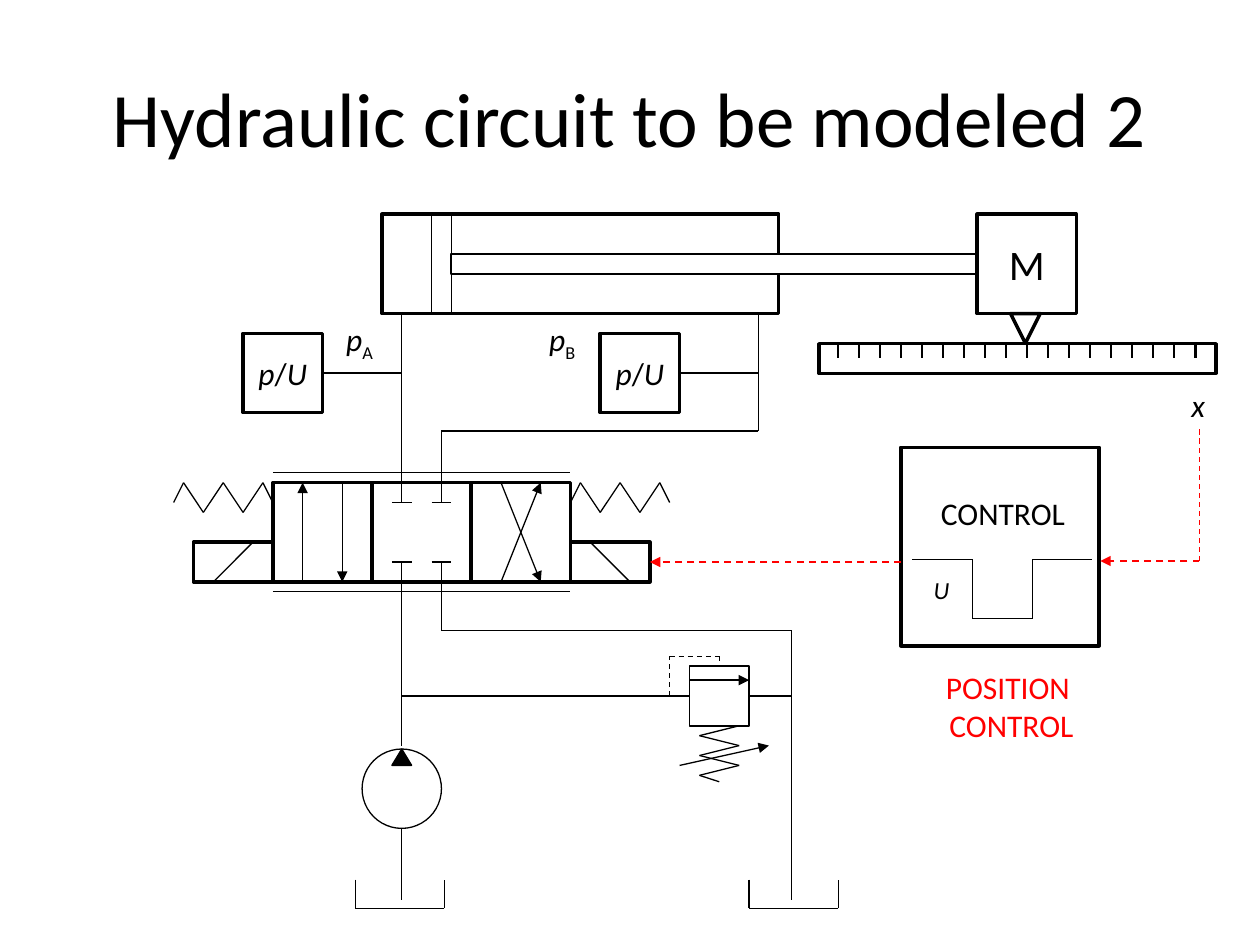
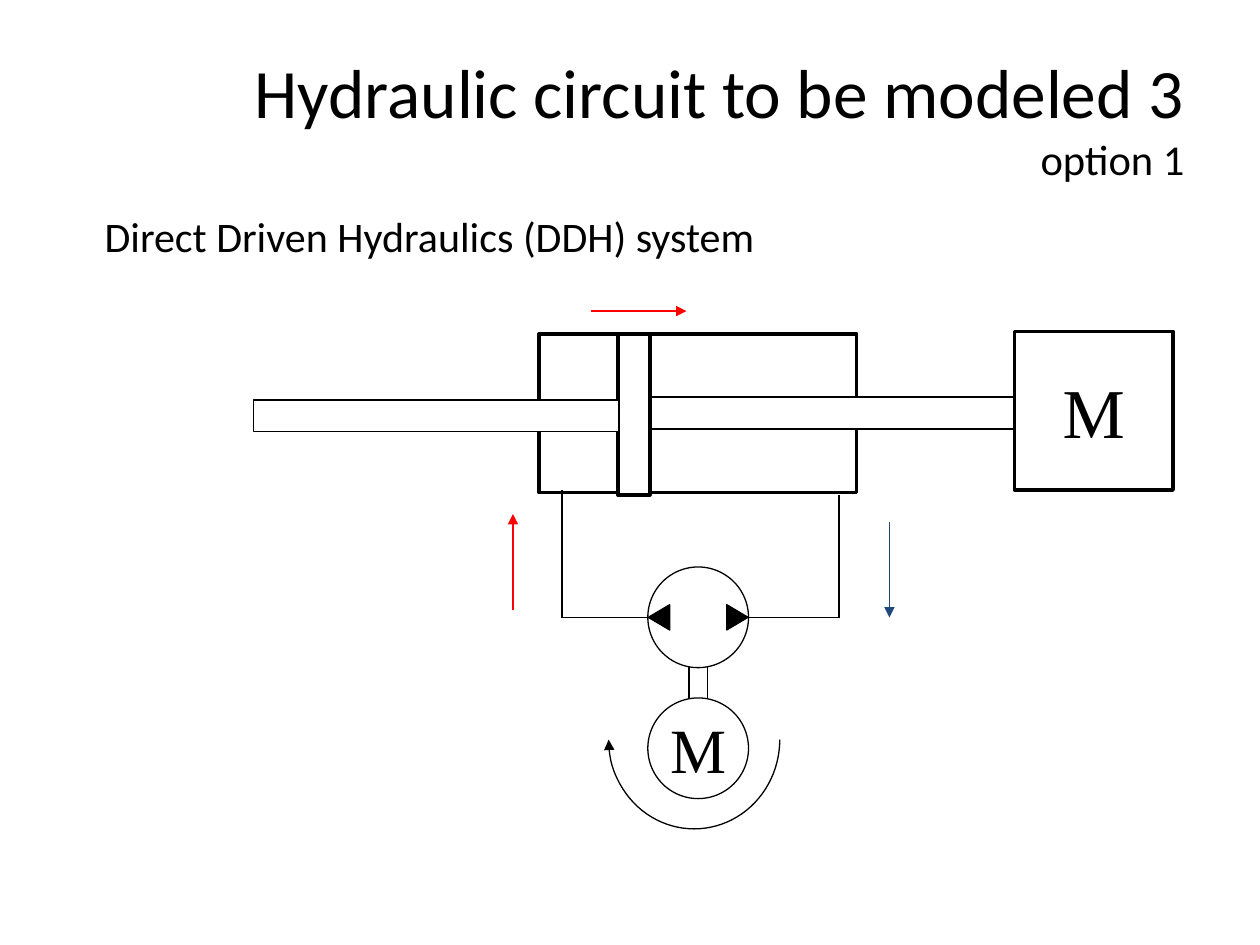
from dataclasses import dataclass
from itertools import pairwise
from typing import Any

from lxml.etree import SubElement
from pptx import Presentation
from pptx.dml.color import RGBColor
from pptx.enum.dml import MSO_LINE
from pptx.enum.shapes import MSO_CONNECTOR, MSO_SHAPE
from pptx.enum.text import MSO_ANCHOR, MSO_AUTO_SIZE, PP_ALIGN
from pptx.oxml.ns import qn
from pptx.util import Cm, Pt

LEFT, RIGHT = 1, 3  # connection sites of a rectangle


@dataclass(frozen=True)
class Theme:
    ink: str = "000000"
    paper: str = "FFFFFF"
    signal: str = "FF0000"
    backflow: str = "1F497D"
    sans: str = "Calibri"
    serif: str = "Times New Roman"
    title: float = 44
    title_small: float = 39.6
    option: float = 24.3
    mass: float = 24
    mass_large: float = 40
    motor: float = 36
    label: float = 18
    small: float = 14
    thin: float = 0.75
    medium: float = 1
    tick: float = 1.25
    heavy: float = 2


THEME = Theme()


def format_run(run, size, color=THEME.ink, font=THEME.sans, style=""):
    run.font.size = Pt(size)
    run.font.name = font
    run.font.color.rgb = RGBColor.from_string(color)
    if style == "italic":
        run.font.italic = True
    elif style == "subscript":
        run.font._element.set("baseline", "-25000")


def write(frame, content, size, color=THEME.ink, font=THEME.sans, align=PP_ALIGN.LEFT):
    """Fill a frame with plain text or with (text, style) pieces."""
    frame.word_wrap = False
    if isinstance(content, str):
        frame.text = content
    else:
        for piece, style in content:
            run = frame.paragraphs[0].add_run()
            run.text = piece
            format_run(run, size, color, font, style)
    for paragraph in frame.paragraphs:
        paragraph.alignment = align
        if isinstance(content, str):
            for run in paragraph.runs:
                format_run(run, size, color, font)


def add_arrowhead(shape):
    SubElement(shape._element.spPr.find(qn("a:ln")), qn("a:tailEnd"), type="triangle")


@dataclass
class Region:
    """A part of a slide whose lengths, in centimetres, count from its corner."""
    shapes: Any
    left: float = 0
    top: float = 0

    def at(self, x, y):
        return Region(self.shapes, self.left + x, self.top + y)

    def place(self, x, y):
        return Cm(self.left + x), Cm(self.top + y)

    def shape(self, x, y, width, height, weight=THEME.heavy,
              kind=MSO_SHAPE.RECTANGLE, fill=None, turn=0):
        shape = self.shapes.add_shape(kind, *self.place(x, y), Cm(width), Cm(height))
        shape.shadow.inherit = False
        shape.rotation = turn
        if fill:
            shape.fill.solid()
            shape.fill.fore_color.rgb = RGBColor.from_string(fill)
        else:
            shape.fill.background()
        shape.line.color.rgb = RGBColor.from_string(THEME.ink)
        shape.line.width = Pt(weight)
        return shape

    def line(self, start, end, weight=THEME.thin, color=THEME.ink, dashed=False, arrow=False):
        line = self.shapes.add_connector(
            MSO_CONNECTOR.STRAIGHT, *self.place(*start), *self.place(*end))
        line.line.color.rgb = RGBColor.from_string(color)
        line.line.width = Pt(weight)
        if dashed:
            line.line.dash_style = MSO_LINE.DASH
        if arrow:
            add_arrowhead(line)
        SubElement(line._element.spPr, qn("a:effectLst"))
        return line

    def route(self, *points, **style):
        for start, end in pairwise(points):
            self.line(start, end, **style)

    def label(self, x, y, width, height, content, size=THEME.label, **style):
        box = self.shapes.add_textbox(*self.place(x, y), Cm(width), Cm(height))
        write(box.text_frame, content, size, **style)


def write_inside(shape, content, size, **style):
    frame = shape.text_frame
    frame.margin_left = frame.margin_right = frame.margin_top = frame.margin_bottom = 0
    frame.vertical_anchor = MSO_ANCHOR.MIDDLE
    write(frame, content, size, align=PP_ALIGN.CENTER, **style)


def titled_slide(deck, heading, sizes, align):
    """Add a slide whose title runs take the given sizes in turn."""
    slide = deck.slides.add_slide(deck.slide_layouts.get_by_name("Title Only"))
    title = slide.shapes.title
    title.left, title.top, title.width, title.height = Cm(1.27), Cm(0.76), Cm(22.86), Cm(3.18)
    frame = title.text_frame
    frame.text = heading
    frame.auto_size = MSO_AUTO_SIZE.NONE
    frame.vertical_anchor = MSO_ANCHOR.MIDDLE
    paragraph = frame.paragraphs[0]
    paragraph.alignment = align
    for run, size in zip(paragraph.runs, sizes):
        format_run(run, size)
    return Region(slide.shapes)


def draw_cylinder_and_scale(region):
    region.shape(0, 0, 8, 2)
    for piston_face in (1, 1.4):
        region.line((piston_face, 0), (piston_face, 2))
    region.shape(1.4, 0.8, 10.6, 0.4, THEME.medium, fill=THEME.paper)
    mass = region.shape(12, 0, 2, 2)
    write_inside(mass, "M", THEME.mass)
    region.shape(12.67, 2, 0.6, 0.6, kind=MSO_SHAPE.ISOSCELES_TRIANGLE, turn=180)
    scale = region.at(8.81, 2.61)
    scale.shape(0, 0, 8, 0.6)
    for tick in range(18):
        x = 0.38 + tick * 0.424
        scale.line((x, 0.28), (x, 0), weight=THEME.tick)


def draw_pressure_sensor(region, hose_x, port, port_x):
    sensor = region.shape(0, 0, 1.6, 1.6)
    write_inside(sensor, [("p", "italic"), ("/", ""), ("U", "italic")], THEME.label)
    region.line((1.6, 0.8), (hose_x, 0.8)).begin_connect(sensor, RIGHT)
    region.label(port_x, -0.4, 1.09, 1.02, [("p", "italic"), (port, "subscript")])


def draw_directional_valve(region):
    """Draw the three positions, springs and solenoids; return the right solenoid."""
    for position in range(3):
        region.shape(2 * position, 0, 2, 2)
    for rail in (-0.2, 2.2):
        region.line((0, rail), (6, rail))
    for start, end in (((0.6, 2), (0.6, 0)), ((1.4, 0), (1.4, 2)),
                       ((4.6, 0), (5.4, 2)), ((4.6, 2), (5.4, 0))):
        region.line(start, end, arrow=True)
    for port in (2.6, 3.4):
        for edge, stop in ((0, 0.4), (2, 1.6)):
            region.line((port, edge), (port, stop))
            region.line((port - 0.2, stop), (port + 0.2, stop))
    coil = ((0, 0.4), (0.2, 0), (0.6, 0.6), (1, 0), (1.4, 0.6), (1.8, 0), (2, 0.4))
    for side, outward in ((0, -1), (6, 1)):
        region.route(*((side + outward * x, y) for x, y in coil))
        solenoid = region.shape(min(side, side + 1.6 * outward), 1.2, 1.6, 0.8)
        region.line((side + 0.4 * outward, 1.2), (side + 1.2 * outward, 2))
    return solenoid


def draw_relief_valve(region):
    body = region.shape(0, 0, 1.2, 1.2, THEME.medium)
    region.line((0, 0.28), (1.2, 0.28), arrow=True)
    region.route((-0.4, 0.6), (-0.4, -0.2), (0.6, -0.2), (0.6, 0), dashed=True)
    turns = [(0.2 if i % 2 else 1, 1.2 + 0.2 * i) for i in range(6)]
    region.route(*turns, (0.6, 2.33))
    region.line((-0.2, 2), (1.6, 1.6), arrow=True)
    return body


def draw_pump(region):
    region.shape(0, 0, 1.6, 1.6, THEME.thin, MSO_SHAPE.OVAL, THEME.paper)
    region.shape(0.6, 0, 0.4, 0.33, THEME.thin, MSO_SHAPE.ISOSCELES_TRIANGLE, THEME.ink)


def draw_tank(region):
    region.route((0, 0), (0, 0.58), (1.8, 0.58), (1.8, 0))


def draw_pipes(region, relief):
    """Draw the pipes, measured from the corner of the directional valve."""
    region.line((2.6, 0), (2.6, -3.41))
    region.route((3.4, 0), (3.4, -1.04), (9.79, -1.04), (9.79, -3.41))
    region.line((2.6, 2), (2.6, 5.31))
    region.line((2.6, 6.97), (2.6, 8.41))
    region.line((2.6, 4.3), (8.4, 4.3)).end_connect(relief, LEFT)
    region.line((9.6, 4.3), (10.45, 4.3)).begin_connect(relief, RIGHT)
    region.route((3.4, 2), (3.4, 2.98), (10.45, 2.98), (10.45, 8.41))


def draw_controller(region, solenoid):
    region.shape(0, 0, 4, 4)
    region.label(0.56, 0.81, 3.02, 1.02, "CONTROL")
    region.route((0.23, 2.26), (1.45, 2.26), (1.45, 3.45), (2.65, 3.45),
                 (2.65, 2.26), (3.86, 2.26))
    region.label(0.41, 2.44, 0.84, 0.86, [("U", "italic")], THEME.small)
    dashed_signal = dict(color=THEME.signal, dashed=True)
    command = region.line((0, 2.31), (-5.06, 2.31), THEME.medium, arrow=True, **dashed_signal)
    command.end_connect(solenoid, RIGHT)
    region.label(5.61, -1.37, 0.79, 1.02, [("x", "italic")])
    region.line((6.02, 2.29), (6.02, -0.38), **dashed_signal)
    region.line((6.02, 2.29), (4.02, 2.29), THEME.medium, arrow=True, **dashed_signal)
    region.label(0.64, 4.32, 3.18, 1.8, "POSITION \nCONTROL",
                 color=THEME.signal, align=PP_ALIGN.CENTER)


def build_position_control(deck):
    page = titled_slide(deck, "Hydraulic circuit to be modeled 2",
                        [THEME.title], PP_ALIGN.CENTER)
    valve = page.at(5.5, 9.73)
    solenoid = draw_directional_valve(valve)
    relief = draw_relief_valve(page.at(13.9, 13.43))
    draw_pipes(valve, relief)
    draw_pump(page.at(7.3, 15.1))
    for tank_left in (7.16, 15.1):
        draw_tank(page.at(tank_left, 17.73))
    draw_cylinder_and_scale(page.at(7.7, 4.32))
    draw_pressure_sensor(page.at(4.9, 6.72), 3.2, "A", 1.83)
    draw_pressure_sensor(page.at(12.1, 6.72), 3.19, "B", -1.28)
    draw_controller(page.at(18.16, 9.02), solenoid)


def draw_double_rod_cylinder(region):
    region.shape(0, 0, 6.4, 3.2, fill=THEME.paper)
    region.shape(2.23, 1.28, 7.37, 0.64, THEME.medium, fill=THEME.paper)
    region.shape(1.59, 0, 0.64, 3.25, fill=THEME.paper)
    region.shape(-5.76, 1.33, 7.37, 0.64, THEME.medium, fill=THEME.paper)
    mass = region.shape(9.58, -0.05, 3.2, 3.2, fill=THEME.paper)
    write_inside(mass, "M", THEME.mass_large, font=THEME.serif)


def draw_pump_and_motor(region):
    diameter, wedge = 2.03, 0.51
    region.shape(0.83, 2.01, 0.38, 0.64, THEME.thin, fill=THEME.paper)
    pump, motor = (region.shape(0, y, diameter, diameter, THEME.thin, MSO_SHAPE.OVAL, THEME.paper)
                   for y in (0, 2.64))
    write_inside(motor, "M", THEME.motor, font=THEME.serif)
    for x, turn in ((-0.03, 270), (diameter - wedge + 0.03, 90)):
        region.shape(x, 0.8, wedge, 0.43, THEME.thin,
                     MSO_SHAPE.ISOSCELES_TRIANGLE, THEME.ink, turn)
    region.route((0, 1.02), (-1.73, 1.02), (-1.73, -1.55), weight=THEME.medium)
    region.route((diameter, 1.02), (3.86, 1.02), (3.86, -1.45), weight=THEME.medium)
    rotation = region.shape(-0.79, 1.68, 3.45, 3.6, THEME.thin, MSO_SHAPE.ARC)
    rotation.adjustments[0] = 0
    rotation.adjustments[1] = 180 * 0.6  # 60000ths of a degree over 100000
    add_arrowhead(rotation)


def draw_flow_arrows(region):
    for start, end, color in (((0, 6.02), (0, 4.09), THEME.signal),
                              ((7.59, 4.25), (7.59, 6.18), THEME.backflow),
                              ((1.57, 0), (3.5, 0), THEME.signal)):
        region.line(start, end, THEME.medium, color, arrow=True)


def build_direct_drive(deck):
    page = titled_slide(deck, "Hydraulic circuit to be modeled 3\voption 1",
                        [THEME.title_small, THEME.option], PP_ALIGN.RIGHT)
    draw_double_rod_cylinder(page.at(10.87, 6.73))
    draw_pump_and_motor(page.at(13.06, 11.43))
    draw_flow_arrows(page.at(10.34, 6.27))
    page.label(1.86, 4.11, 13.92, 1.27, "Direct Driven Hydraulics (DDH) system", THEME.mass)


def main():
    deck = Presentation()
    deck.slide_width, deck.slide_height = Cm(25.4), Cm(19.05)
    build_position_control(deck)
    build_direct_drive(deck)
    deck.save("out.pptx")


if __name__ == "__main__":
    main()
